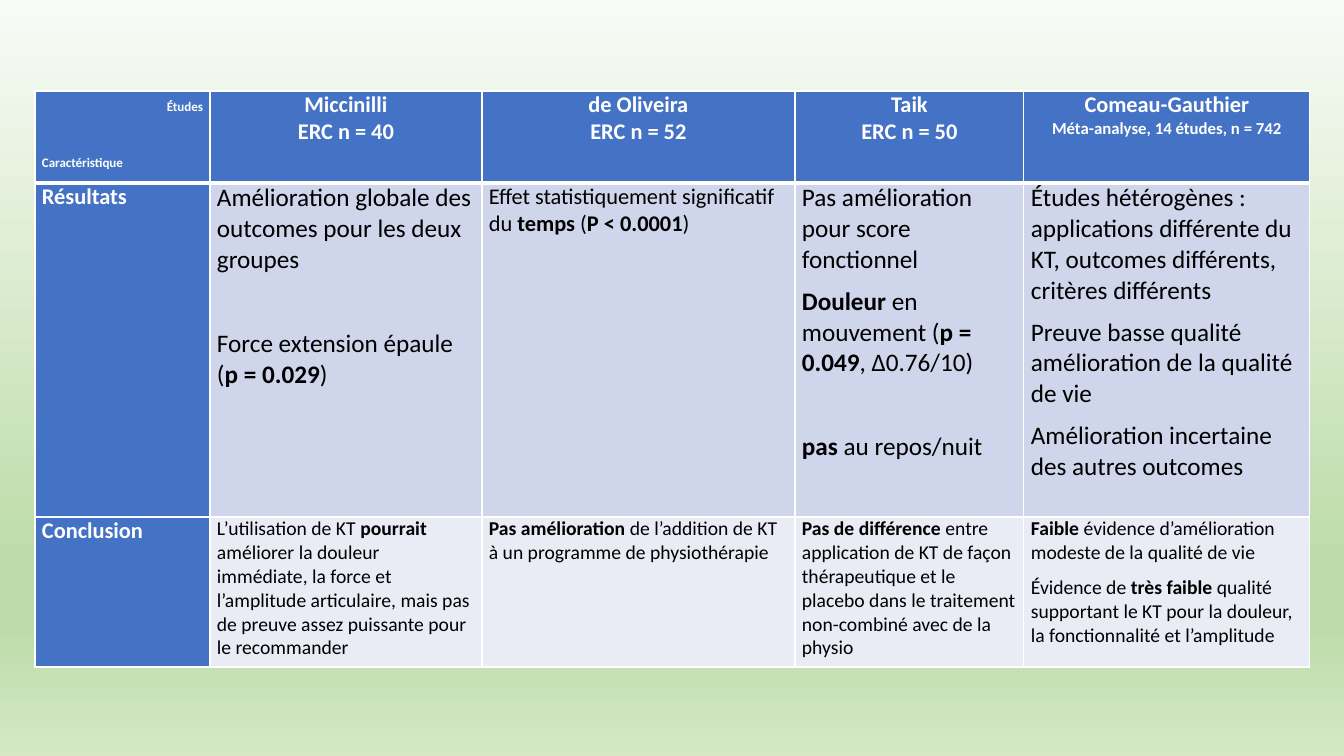
from lxml import etree
from pptx import Presentation
from pptx.dml.color import RGBColor
from pptx.enum.text import PP_ALIGN
from pptx.oxml.ns import qn
from pptx.util import Pt

LEFT, CENTER, RIGHT = PP_ALIGN.LEFT, PP_ALIGN.CENTER, PP_ALIGN.RIGHT
EMU_PER_PX = 12192000 / 1344
SLIDE_SIZE = (1344, 756)
TABLE_ORIGIN = (35, 91)
COLUMN_WIDTHS = (175, 272, 313, 229, 286)
ROW_HEIGHTS = (92, 334, 150)
CELL_MARGIN = 7
FONT = "Calibri"
SPACE_AFTER = 8
GAP_BEFORE = 30

COLORS = {
    "header": "4472C4",
    "results": "CFD5EA",
    "conclusion": "E9EBF5",
    "white": "FFFFFF",
    "black": "000000",
}
BACKGROUND_STOPS = ((0, "F8FBF6"), (74, "BEDCAA"), (83, "BEDCAA"), (100, "D4E8C6"))

STUDIES = (
    ("Miccinilli", "ERC n = 40", 16),
    ("de Oliveira", "ERC n = 52", 16),
    ("Taik", "ERC n = 50", 16),
    ("Comeau-Gauthier", "Méta-analyse, 14 études, n = 742", 12),
)

# ** toggles bold; each entry is (text, space before in points)
FINDINGS = (
    {
        "title": "Résultats",
        "fill": "results",
        "sizes": (18, 16, 18, 18),
        "cells": (
            (("Amélioration globale des outcomes pour les deux groupes", 0),
             ("Force extension épaule (**p = 0.029**)", GAP_BEFORE)),
            (("Effet statistiquement significatif du **temps **(**P < 0.0001**)", 0),),
            (("Pas amélioration pour score fonctionnel", 0),
             ("**Douleur** en mouvement (**p = 0.049**, Δ0.76/10)", 0),
             ("**pas** au repos/nuit", GAP_BEFORE)),
            (("Études hétérogènes : applications différente du KT, outcomes différents, critères différents", 0),
             ("Preuve basse qualité amélioration de la qualité de vie", 0),
             ("Amélioration incertaine des autres outcomes", 0)),
        ),
    },
    {
        "title": "Conclusion",
        "fill": "conclusion",
        "sizes": (14, 14, 14, 14),
        "cells": (
            (("L’utilisation de KT **pourrait** améliorer la douleur immédiate, la force et l’amplitude "
              "articulaire, mais pas de preuve assez puissante pour le recommander", 0),),
            (("**Pas amélioration **de l’addition de KT à un programme de physiothérapie", 0),),
            (("**Pas de différence **entre application de KT de façon thérapeutique et le placebo "
              "dans le traitement non-combiné avec de la physio", 0),),
            (("**Faible** évidence d’amélioration modeste de la qualité de vie", 0),
             ("Évidence de **très faible **qualité supportant le KT pour la douleur, "
              "la fonctionnalité et l’amplitude", 0)),
        ),
    },
)


def px(value):
    return round(value * EMU_PER_PX)


def rgb(name):
    return RGBColor.from_string(COLORS[name])


def write(paragraph, text, size=16, color="black", bold=False, align=LEFT, before=0, baseline=0):
    paragraph.alignment = align
    paragraph.space_before = Pt(before)
    paragraph.space_after = Pt(SPACE_AFTER)
    for index, part in enumerate(text.split("**")):
        if not part:
            continue
        run = paragraph.add_run()
        run.text = part
        run.font.name = FONT
        run.font.size = Pt(size)
        run.font.bold = bold or index % 2 == 1
        run.font.color.rgb = rgb(color)
        if baseline:
            run._r.get_or_add_rPr().set("baseline", str(baseline * 1000))


def write_header(paragraph, text, **options):
    write(paragraph, text, color="white", bold=True, **options)


def style_cell(cell, fill, widths):
    cell.margin_left = cell.margin_right = px(CELL_MARGIN)
    cell.margin_top = cell.margin_bottom = 0
    properties = cell._tc.get_or_add_tcPr()
    for side, width in zip("LRTB", widths):
        line = etree.SubElement(properties, qn(f"a:ln{side}"), w=str(Pt(width)))
        solid = etree.SubElement(line, qn("a:solidFill"))
        etree.SubElement(solid, qn("a:srgbClr"), val=COLORS["white"])
    cell.fill.solid()
    cell.fill.fore_color.rgb = rgb(fill)


def paint_background(slide):
    slide.background.fill.gradient()
    gradient = slide._element.find(".//" + qn("a:gradFill"))
    stops = gradient.find(qn("a:gsLst"))
    for stop in list(stops):
        stops.remove(stop)
    for position, color in BACKGROUND_STOPS:
        stop = etree.SubElement(stops, qn("a:gs"), pos=str(position * 1000))
        etree.SubElement(stop, qn("a:srgbClr"), val=color)
    direction = gradient.find(qn("a:lin"))
    direction.set("ang", "5400000")
    direction.set("scaled", "0")


def add_results_table(slide):
    left, top = TABLE_ORIGIN
    table = slide.shapes.add_table(
        len(ROW_HEIGHTS), len(COLUMN_WIDTHS), px(left), px(top),
        px(sum(COLUMN_WIDTHS)), px(sum(ROW_HEIGHTS))).table
    table.horz_banding = False
    for column, width in zip(table.columns, COLUMN_WIDTHS):
        column.width = px(width)
    for row, height in zip(table.rows, ROW_HEIGHTS):
        row.height = px(height)

    fills = ["header"] + [finding["fill"] for finding in FINDINGS]
    for row_index, fill in enumerate(fills):
        widths = (1, 1, 3 if row_index == 1 else 1, 3 if row_index == 0 else 1)
        for column_index in range(len(COLUMN_WIDTHS)):
            style_cell(table.cell(row_index, column_index),
                       fill if column_index else "header", widths)

    corner = table.cell(0, 0).text_frame
    write_header(corner.paragraphs[0], "Études", align=RIGHT, baseline=2)
    write_header(corner.add_paragraph(), "Caractéristique", baseline=-75)

    for column_index, (study, sample, size) in enumerate(STUDIES, 1):
        paragraph = table.cell(0, column_index).text_frame.paragraphs[0]
        write_header(paragraph, study, align=CENTER)
        paragraph.add_line_break()
        write_header(paragraph, sample, size=size, align=CENTER)

    for row_index, finding in enumerate(FINDINGS, 1):
        write_header(table.cell(row_index, 0).text_frame.paragraphs[0], finding["title"])
        for column_index, (lines, size) in enumerate(zip(finding["cells"], finding["sizes"]), 1):
            frame = table.cell(row_index, column_index).text_frame
            for line_index, (text, before) in enumerate(lines):
                paragraph = frame.add_paragraph() if line_index else frame.paragraphs[0]
                write(paragraph, text, size=size, before=before)


def main():
    presentation = Presentation()
    presentation.slide_width, presentation.slide_height = map(px, SLIDE_SIZE)
    slide = presentation.slides.add_slide(presentation.slide_layouts[6])
    paint_background(slide)
    add_results_table(slide)
    presentation.save("out.pptx")


if __name__ == "__main__":
    main()
